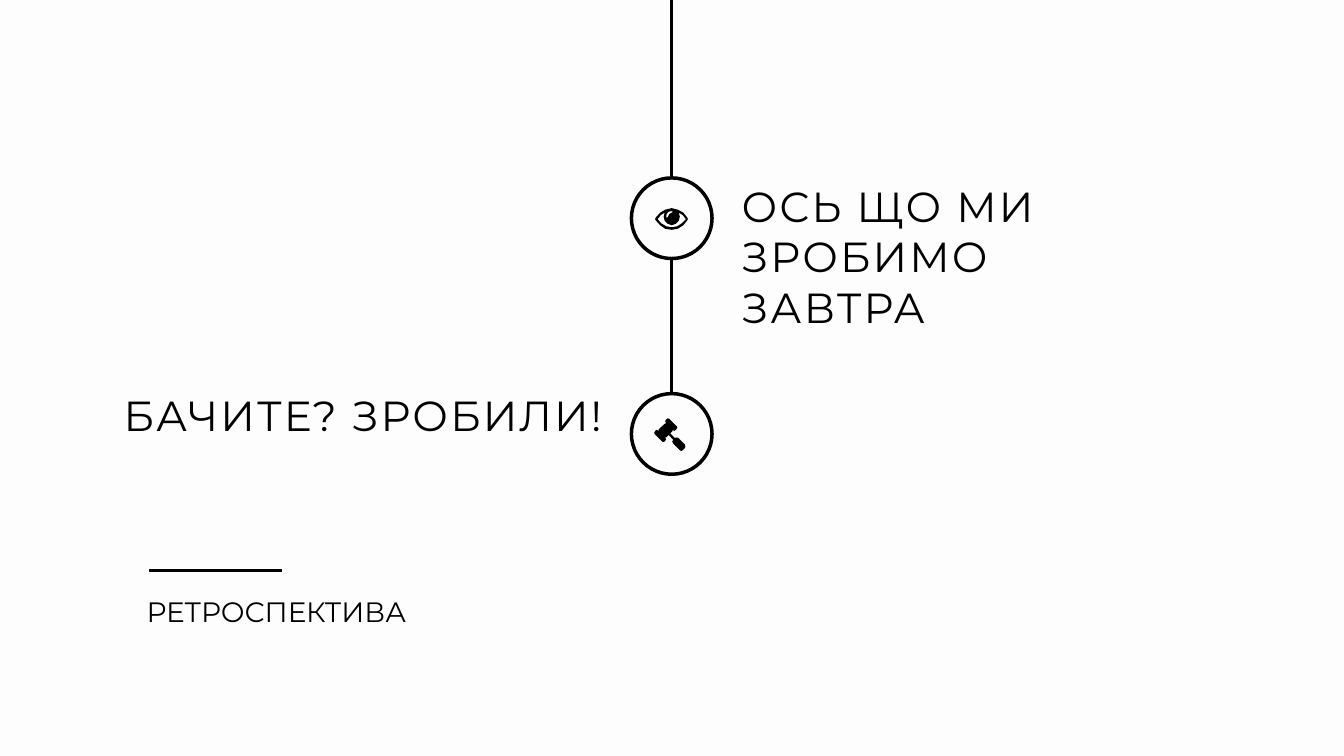
from dataclasses import dataclass

from lxml import etree
from pptx import Presentation
from pptx.dml.color import RGBColor
from pptx.enum.shapes import MSO_CONNECTOR as CONNECTOR, MSO_SHAPE as SHAPE
from pptx.enum.text import MSO_ANCHOR as ANCHOR, MSO_AUTO_SIZE as AUTO_SIZE, PP_ALIGN as ALIGN
from pptx.oxml.ns import qn
from pptx.util import Emu, Pt

PX = 9144  # EMU, 100 px to the inch


@dataclass(frozen=True)
class Theme:
    ink: RGBColor = RGBColor(0, 0, 0)
    paper: RGBColor = RGBColor(0xFD, 0xFD, 0xFD)
    font: str = "Montserrat"
    title_size: Pt = Pt(40)
    caption_size: Pt = Pt(60)
    caption_spacing: int = 300  # hundredths of a point
    line_width: Pt = Pt(5)


THEME = Theme()
AXIS_X = 1333
NODE_SIZE = 160
EYE_NODE_Y, GAVEL_NODE_Y = 353, 781

# Icon contours, in px from the icon's top left corner
EYE = [
    [(33, 0), (45, 3), (56, 9), (64, 19), (65, 22), (64, 24), (56, 34), (45, 41),
     (33, 43), (20, 41), (10, 34), (1, 24), (0, 22), (1, 19), (10, 9), (20, 3)],
    [(19, 9), (11, 14), (5, 22), (12, 30), (22, 36), (33, 38), (44, 36), (53, 30),
     (61, 22), (55, 14), (47, 9), (49, 17), (47, 25), (41, 31), (33, 34), (25, 31),
     (19, 25), (17, 17)],
    [(33, 6), (27, 7), (23, 11), (22, 17), (23, 19), (25, 18), (28, 12), (33, 9),
     (35, 8), (34, 6)],
]
GAVEL = [
    [(27, 0), (30, 1), (45, 16), (46, 19), (43, 23), (40, 25), (37, 23), (37, 25),
     (32, 30), (41, 39), (45, 38), (48, 39), (61, 52), (62, 56), (61, 59), (57, 63),
     (54, 65), (51, 63), (38, 50), (36, 46), (38, 43), (29, 33), (24, 38), (22, 38),
     (24, 42), (21, 46), (18, 47), (16, 46), (1, 31), (0, 29), (3, 24), (5, 23),
     (9, 25), (9, 22), (22, 10), (24, 10), (22, 6), (23, 3)],
]


def px(*values):
    return [Emu(v * PX) for v in values]


def add_line(slide, start, end):
    s = slide.shapes.add_connector(CONNECTOR.STRAIGHT, *px(*start, *end))
    s.line.color.rgb = THEME.ink
    s.line.width = THEME.line_width
    etree.SubElement(s._element.spPr, qn("a:effectLst"))
    return s


def add_node(slide, top, line_start):
    """Add a circle on the axis and the line that comes down to it."""
    s = slide.shapes.add_shape(
        SHAPE.OVAL, *px(AXIS_X - NODE_SIZE // 2, top, NODE_SIZE, NODE_SIZE))
    s.shadow.inherit = False
    s.fill.background()
    s.line.color.rgb = THEME.ink
    s.line.width = THEME.line_width
    add_line(slide, (AXIS_X, line_start), (AXIS_X, top)).end_connect(s, 0)


def add_icon(slide, left, top, contours):
    first, *rest = contours
    builder = slide.shapes.build_freeform(*first[0], scale=PX)
    builder.add_line_segments(first[1:])
    for contour in rest:
        builder.move_to(*contour[0])
        builder.add_line_segments(contour[1:])
    s = builder.convert_to_shape(*px(left, top))
    s.shadow.inherit = False
    s.fill.solid()
    s.fill.fore_color.rgb = THEME.ink
    s.line.fill.background()


def write_text(s, text, size, align=ALIGN.LEFT):
    tf = s.text_frame
    tf.word_wrap = True
    tf.auto_size = AUTO_SIZE.SHAPE_TO_FIT_TEXT
    tf.vertical_anchor = ANCHOR.TOP
    p = tf.paragraphs[0]
    p.alignment = align
    p.font.name = THEME.font
    p.font.size = size
    p.font.color.rgb = THEME.ink
    r = p.add_run()
    r.text = text
    return r


def add_title(slide, text, box):
    sp = slide.shapes.title
    sp.left, sp.top, sp.width, sp.height = px(*box)
    write_text(sp, text, THEME.title_size)


def add_caption(slide, text, box, align=ALIGN.LEFT):
    s = slide.shapes.add_textbox(*px(*box))
    r = write_text(s, text, THEME.caption_size, align)
    r.font._element.set("spc", str(THEME.caption_spacing))


def main():
    prs = Presentation()
    prs.slide_width, prs.slide_height = px(2667, 1500)
    slide = prs.slides.add_slide(prs.slide_layouts.get_by_name("Title Only"))
    slide.background.fill.solid()
    slide.background.fill.fore_color.rgb = THEME.paper

    add_title(slide, "РЕТРОСПЕКТИВА", (281, 1175, 613, 77))
    add_line(slide, (296, 1132), (559, 1132))

    add_node(slide, EYE_NODE_Y, 0)
    add_node(slide, GAVEL_NODE_Y, EYE_NODE_Y + NODE_SIZE)
    add_icon(slide, 1300, 413, EYE)
    add_icon(slide, 1298, 830, GAVEL)

    add_caption(slide, "ОСЬ ЩО МИ ЗРОБИМО ЗАВТРА", (1462, 353, 733, 312))
    add_caption(slide, "БАЧИТЕ? ЗРОБИЛИ!", (71, 768, 1134, 111), ALIGN.RIGHT)

    prs.save("out.pptx")


if __name__ == "__main__":
    main()
